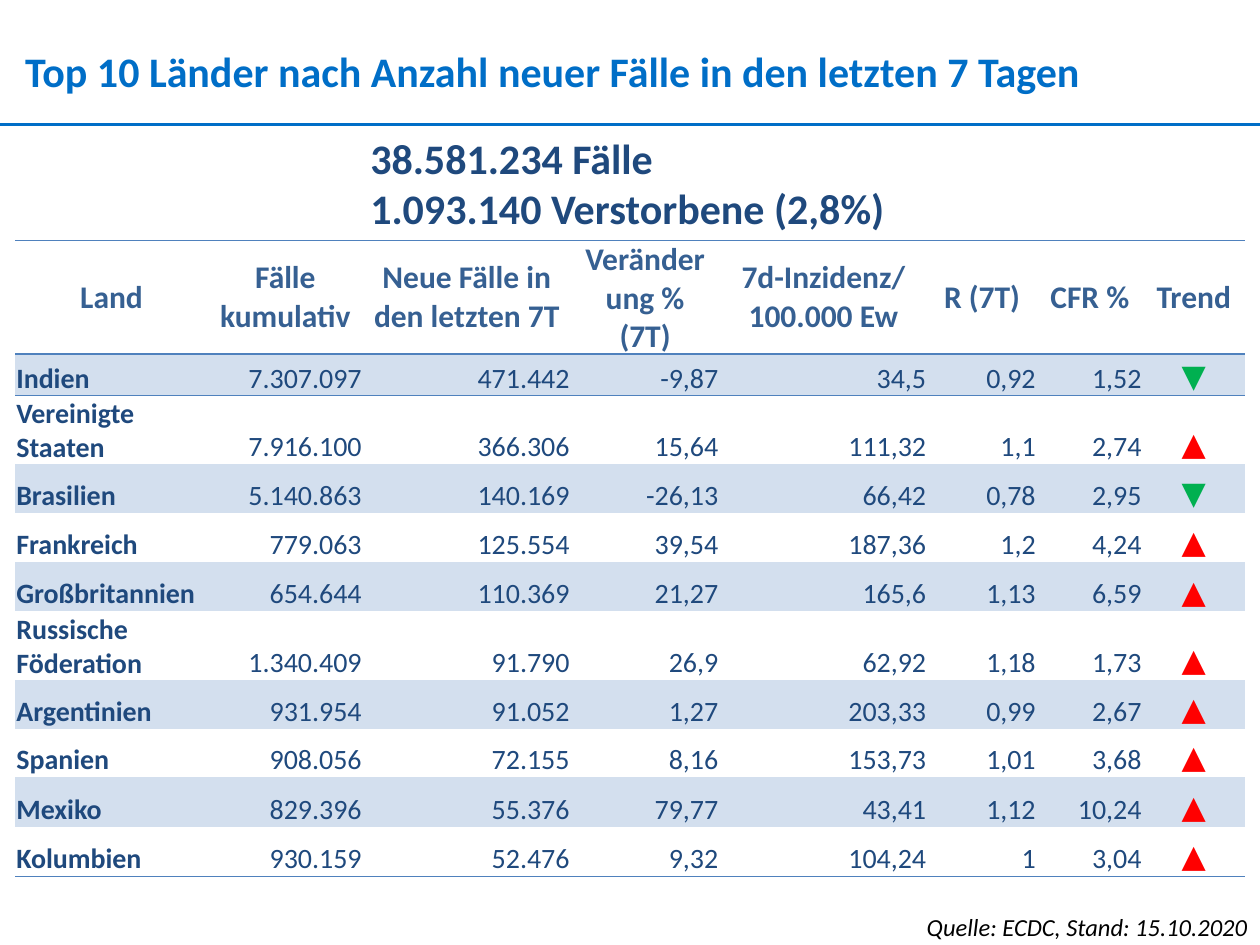
from lxml.etree import SubElement
from pptx import Presentation
from pptx.dml.color import RGBColor
from pptx.enum.shapes import MSO_CONNECTOR
from pptx.enum.text import MSO_ANCHOR as ANCHOR, MSO_AUTO_SIZE as AUTO, PP_ALIGN as ALIGN
from pptx.oxml.ns import qn
from pptx.util import Inches, Pt

BLUE = RGBColor(0x00, 0x6E, 0xC7)
NAVY = RGBColor(0x1F, 0x49, 0x7D)
HEAD = RGBColor(0x36, 0x60, 0x92)
RULE = RGBColor(0x4F, 0x81, 0xBD)
BAND = RGBColor(0xD3, 0xDF, 0xEE)
GREEN = RGBColor(0x00, 0xB0, 0x50)
RED = RGBColor(0xFF, 0x00, 0x00)
BLACK = RGBColor(0x00, 0x00, 0x00)
NO_STYLE = "{2D5ABB26-0587-4C30-8999-92F81FD0307C}"

COLS = [1.53, 1.23, 1.65, 1.18, 1.65, 0.87, 0.84, 0.81]
HEIGHTS = [0.87, 0.33, 0.53] + [0.39] * 5 + [0.38, 0.4, 0.39]
ROWS = [
    ["Land", "Fälle kumulativ", "Neue Fälle in den letzten 7T", "Veränderung % (7T)",
     "7d-Inzidenz/ 100.000 Ew", "R (7T)", "CFR %", "Trend"],
    ["Indien", "7.307.097", "471.442", "-9,87", "34,5", "0,92", "1,52", "▼"],
    ["Vereinigte Staaten", "7.916.100", "366.306", "15,64", "111,32", "1,1", "2,74", "▲"],
    ["Brasilien", "5.140.863", "140.169", "-26,13", "66,42", "0,78", "2,95", "▼"],
    ["Frankreich", "779.063", "125.554", "39,54", "187,36", "1,2", "4,24", "▲"],
    ["Großbritannien", "654.644", "110.369", "21,27", "165,6", "1,13", "6,59", "▲"],
    ["Russische Föderation", "1.340.409", "91.790", "26,9", "62,92", "1,18", "1,73", "▲"],
    ["Argentinien", "931.954", "91.052", "1,27", "203,33", "0,99", "2,67", "▲"],
    ["Spanien", "908.056", "72.155", "8,16", "153,73", "1,01", "3,68", "▲"],
    ["Mexiko", "829.396", "55.376", "79,77", "43,41", "1,12", "10,24", "▲"],
    ["Kolumbien", "930.159", "52.476", "9,32", "104,24", "1", "3,04", "▲"],
]


class SlideBuilder:
    """Holds the font and the current slide and adds styled elements to it."""

    def __init__(self, slide, font="Calibri"):
        self.s, self.font = slide, font

    def add_lines(self, tf, lines, color, size, align=ALIGN.LEFT, **fmt):
        for i, line in enumerate(lines):
            p = tf.add_paragraph() if i else tf.paragraphs[0]
            p.alignment = align
            r = p.add_run()
            r.text = line
            r.font.color.rgb = color
            for name, value in {"name": self.font, "size": Pt(size), **fmt}.items():
                setattr(r.font, name, value)

    def title(self, text, box):
        sp = self.s.shapes.title
        for name, value in zip(("left", "top", "width", "height"), box):
            setattr(sp, name, Inches(value))
        tf = sp.text_frame
        for name in ("margin_left", "margin_top", "margin_right", "margin_bottom"):
            setattr(tf, name, 0)
        tf.auto_size, tf.vertical_anchor = AUTO.NONE, ANCHOR.TOP
        self.add_lines(tf, [text], BLUE, 24, bold=True)

    def text(self, lines, box, color, size, wrap=True, **fmt):
        tf = self.s.shapes.add_textbox(*map(Inches, box)).text_frame
        tf.word_wrap, tf.auto_size = wrap, AUTO.SHAPE_TO_FIT_TEXT
        self.add_lines(tf, lines, color, size, **fmt)

    def line(self, x1, y1, x2, y2):
        sp = self.s.shapes.add_connector(MSO_CONNECTOR.STRAIGHT, *map(Inches, (x1, y1, x2, y2)))
        sp.line.color.rgb, sp.line.width = BLUE, Pt(1.5)
        SubElement(sp._element.spPr, qn("a:effectLst"))

    def border(self, cell, side):
        ln = SubElement(cell._tc.get_or_add_tcPr(), qn(f"a:{side}"), w=str(Pt(1)))
        SubElement(SubElement(ln, qn("a:solidFill")), qn("a:srgbClr"), val=str(RULE))

    def cell(self, cell, text, row, col):
        header, name, trend = row == 0, col == 0, col == len(COLS) - 1
        side, top = (0.06, 0) if header else (0.01, 0.01)
        layout = {"margin_left": Inches(side), "margin_right": Inches(side),
                  "margin_top": Inches(top), "margin_bottom": 0,
                  "vertical_anchor": ANCHOR.MIDDLE if header else ANCHOR.BOTTOM}
        for key, value in layout.items():
            setattr(cell, key, value)
        if row < 2:
            self.border(cell, "lnT")
        if row in (0, len(ROWS) - 1):
            self.border(cell, "lnB")
        if row % 2:
            cell.fill.solid()
            cell.fill.fore_color.rgb = BAND
        else:
            cell.fill.background()
        align = ALIGN.CENTER if header or trend else ALIGN.LEFT if name else ALIGN.RIGHT
        color = HEAD if header else {"▲": RED, "▼": GREEN}.get(text, NAVY)
        self.add_lines(cell.text_frame, [text], color, 18 if header or trend else 16,
                       align, bold=header or name)

    def table(self, left, top):
        box = map(Inches, (left, top, sum(COLS), sum(HEIGHTS)))
        table = self.s.shapes.add_table(len(ROWS), len(COLS), *box).table
        table.first_row = table.horz_banding = False
        table._tbl.tblPr.find(qn("a:tableStyleId")).text = NO_STYLE
        for column, width in zip(table.columns, COLS):
            column.width = Inches(width)
        for i, (row, height) in enumerate(zip(table.rows, HEIGHTS)):
            row.height = Inches(height)
            for j, text in enumerate(ROWS[i]):
                self.cell(row.cells[j], text, i, j)


def main():
    prs = Presentation()
    prs.slide_width, prs.slide_height = Inches(10), Inches(7.5)
    b = SlideBuilder(prs.slides.add_slide(prs.slide_layouts[5]))
    b.title("Top 10 Länder nach Anzahl neuer Fälle in den letzten 7 Tagen", (0.2, 0.36, 9.63, 0.4))
    b.line(0, 0.99, 10, 0.99)
    b.text(["38.581.234 Fälle", "1.093.140 Verstorbene (2,8%)"], (2.84, 1, 4.32, 0.91),
           NAVY, 24, wrap=False, bold=True)
    b.text(["Quelle: ECDC, Stand: 15.10.2020"], (6.46, 7.19, 3.54, 0.34),
           BLACK, 14, align=ALIGN.RIGHT, italic=True)
    b.table(0.12, 1.91)
    prs.save("out.pptx")


if __name__ == "__main__":
    main()
